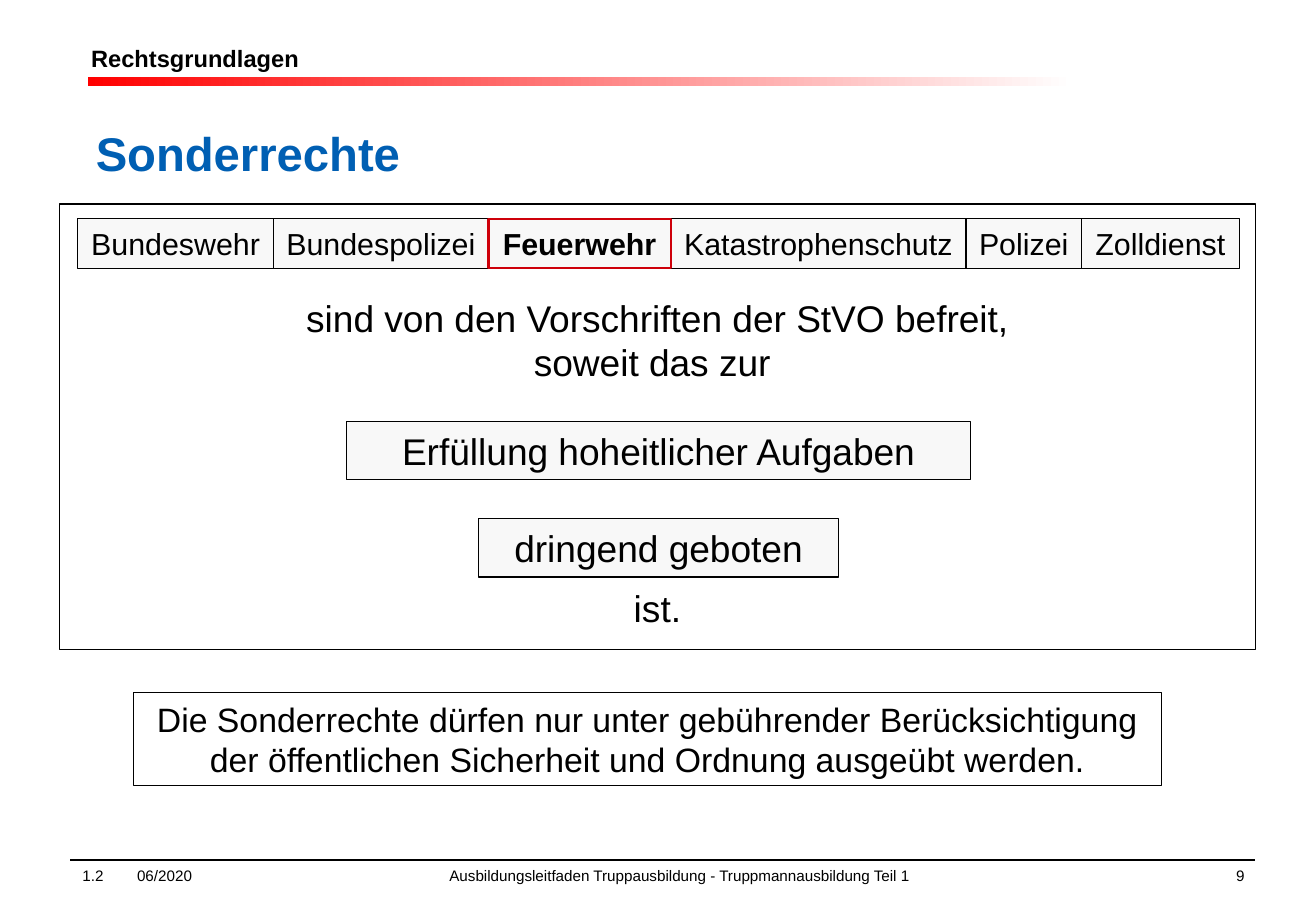
from itertools import accumulate

from pptx import Presentation
from pptx.dml.color import RGBColor
from pptx.enum.shapes import MSO_CONNECTOR, MSO_SHAPE
from pptx.enum.text import MSO_ANCHOR, PP_ALIGN
from pptx.oxml import parse_xml
from pptx.oxml.ns import nsdecls
from pptx.util import Emu, Pt

EMU_PER_PX = 9144  # 100 px to the inch
FONT = "Arial"
COLORS = {
    "text": "000000",
    "title": "005FB3",
    "box": "F8F8F8",
    "highlight": "CE000A",
    "bar_start": "FF0000",
    "bar_end": "FFFFFF",
}


def px(value):
    return Emu(value * EMU_PER_PX)


def color(name):
    return RGBColor.from_string(COLORS[name])


def write_text(shape, text, size, color_name="text", bold=False,
               align=PP_ALIGN.CENTER, anchor=MSO_ANCHOR.MIDDLE, wrap=True):
    frame = shape.text_frame
    frame.word_wrap = wrap
    frame.vertical_anchor = anchor
    paragraph = frame.paragraphs[0]
    paragraph.alignment = align
    run = paragraph.add_run()
    run.text = text
    run.font.name = FONT
    run.font.size = Pt(size)
    run.font.bold = bold
    run.font.color.rgb = color(color_name)
    return paragraph


def add_label(slide, box, text, size, **style):
    shape = slide.shapes.add_textbox(*map(px, box))
    write_text(shape, text, size, **style)
    return shape


def add_box(slide, box, fill=None, line="text", line_width=0.75):
    shape = slide.shapes.add_shape(MSO_SHAPE.RECTANGLE, *map(px, box))
    shape.shadow.inherit = False
    if fill:
        shape.fill.solid()
        shape.fill.fore_color.rgb = color(fill)
    else:
        shape.fill.background()
    shape.line.color.rgb = color(line)
    shape.line.width = Pt(line_width)
    return shape


def add_gradient_bar(slide, box):
    bar = slide.shapes.add_shape(MSO_SHAPE.RECTANGLE, *map(px, box))
    bar.shadow.inherit = False
    bar.line.fill.background()
    bar.fill.gradient()
    bar.fill.gradient_angle = 0
    for stop, name in zip(bar.fill.gradient_stops, ("bar_start", "bar_end")):
        stop.color.rgb = color(name)


def add_rule(slide, left, right, top):
    rule = slide.shapes.add_connector(
        MSO_CONNECTOR.STRAIGHT, px(left), px(top), px(right), px(top))
    rule.line.color.rgb = color("text")
    rule.line.width = Pt(0.75)
    rule._element.spPr.append(parse_xml(f"<a:effectLst {nsdecls('a')}/>"))


def add_services(slide, left, top, height):
    services = [("Bundeswehr", 161), ("Bundespolizei", 177), ("Feuerwehr", 150),
                ("Katastrophenschutz", 243), ("Polizei", 95), ("Zolldienst", 130)]
    lefts = accumulate((width for _, width in services), initial=left)
    cells = [(name, (x, top, width, height))
             for (name, width), x in zip(services, lefts)]
    # The highlighted service lies on top of its neighbours
    for name, box in sorted(cells, key=lambda cell: cell[0] == "Feuerwehr"):
        own = name == "Feuerwehr"
        shape = add_box(slide, box, "box", "highlight" if own else "text",
                        1.25 if own else 0.75)
        write_text(shape, name, 18, bold=own, wrap=False)


def add_footer(slide):
    add_rule(slide, 58, 1033, 708)
    footer = slide.shapes.add_textbox(*map(px, (58, 708, 927, 42)))
    paragraph = write_text(
        footer,
        "1.2\t06/2020\tAusbildungsleitfaden Truppausbildung - Truppmannausbildung Teil 1",
        9, align=PP_ALIGN.LEFT, anchor=MSO_ANCHOR.TOP)
    stops = "".join(f'<a:tab pos="{px(stop)}" algn="l"/>' for stop in (45, 302))
    paragraph._p.get_or_add_pPr().append(
        parse_xml(f"<a:tabLst {nsdecls('a')}>{stops}</a:tabLst>"))
    add_label(slide, (808, 708, 226, 18), "9", 9,
              align=PP_ALIGN.RIGHT, anchor=MSO_ANCHOR.TOP)


def main():
    presentation = Presentation()
    presentation.slide_width = px(1083)
    presentation.slide_height = px(750)
    slide = presentation.slides.add_slide(presentation.slide_layouts[6])

    # Header and title
    add_gradient_bar(slide, (72, 63, 812, 8))
    header = add_label(slide, (73, 35, 446, 26), "Rechtsgrundlagen", 14,
                       bold=True, align=PP_ALIGN.LEFT)
    frame = header.text_frame
    frame.margin_left = frame.margin_right = px(2)
    frame.margin_top = frame.margin_bottom = px(1)
    add_label(slide, (69, 94, 944, 63), "Sonderrechte", 28,
              color_name="title", bold=True, align=PP_ALIGN.LEFT)

    # Exempted services and conditions
    add_box(slide, (49, 168, 984, 367))
    add_services(slide, 64, 180, 41)
    add_label(slide, (232, 238, 618, 83),
              "sind von den Vorschriften der StVO befreit, soweit das zur ", 22)
    for text, box in (("Erfüllung hoheitlicher Aufgaben", (285, 347, 514, 48)),
                      ("dringend geboten", (394, 427, 296, 48))):
        write_text(add_box(slide, box, "box"), text, 22)
    add_label(slide, (502, 477, 78, 47), "ist.", 22)

    # Closing rule
    closing = add_box(slide, (110, 570, 846, 77))
    write_text(closing, "Die Sonderrechte dürfen nur unter gebührender Berücksichtigung "
                        "der öffentlichen Sicherheit und Ordnung ausgeübt werden.", 20)

    add_footer(slide)
    presentation.save("out.pptx")


if __name__ == "__main__":
    main()
